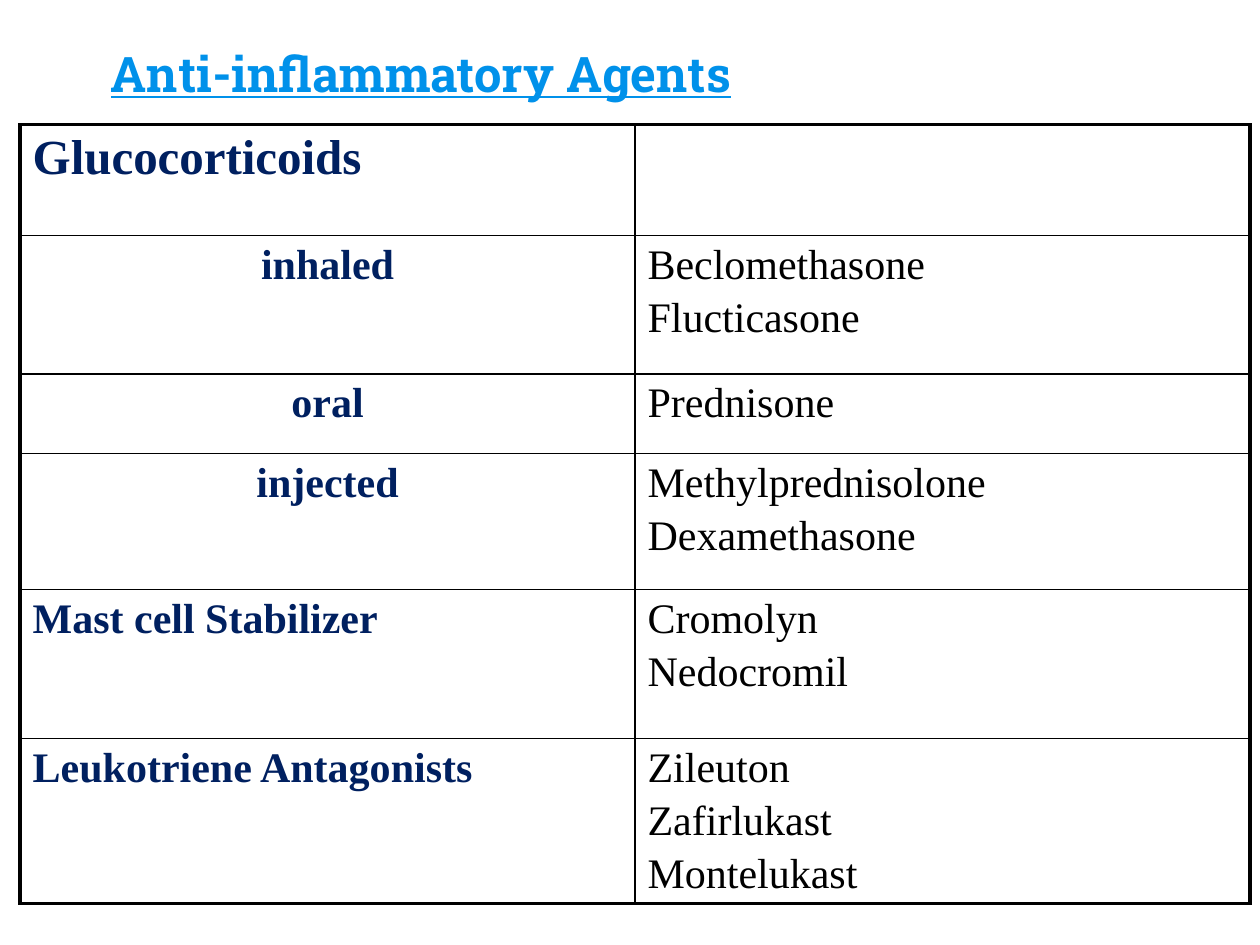
from dataclasses import dataclass

from lxml.etree import SubElement
from pptx import Presentation
from pptx.dml.color import RGBColor
from pptx.enum.text import MSO_ANCHOR as Anchor, MSO_AUTO_SIZE as AutoSize, PP_ALIGN as Align
from pptx.oxml.ns import qn
from pptx.util import Inches, Pt


@dataclass(frozen=True)
class Theme:
    title_color: str = "0091EA"
    group_color: str = "002060"
    drug_color: str = "000000"
    border_color: str = "000000"
    title_font: str = "Roboto Slab"
    table_font: str = "Times New Roman"
    heading_size: float = 28
    body_size: float = 24
    para_gap: float = 3.8
    outer_border: float = 2.25
    inner_border: float = 1


@dataclass(frozen=True)
class DrugGroup:
    name: str
    drugs: tuple[str, ...]
    height: float
    align: Align = Align.LEFT
    size: float = Theme.body_size


THEME = Theme()
TITLE = "Anti-inflammatory Agents"
COLUMN_WIDTH = 4.88
GROUPS = [
    DrugGroup("Glucocorticoids", (), 0.88, size=THEME.heading_size),
    DrugGroup("inhaled", ("Beclomethasone", "Flucticasone"), 1.1, Align.CENTER),
    DrugGroup("oral", ("Prednisone",), 0.63, Align.CENTER),
    DrugGroup("injected", ("Methylprednisolone", "Dexamethasone"), 1.08, Align.CENTER),
    DrugGroup("Mast cell Stabilizer", ("Cromolyn", "Nedocromil"), 1.18),
    DrugGroup("Leukotriene Antagonists", ("Zileuton", "Zafirlukast", "Montelukast"), 1.31),
]


def write_text(frame, lines, *, font=THEME.table_font, size=THEME.body_size,
               color=THEME.drug_color, bold=False, underline=False, align=Align.LEFT) -> None:
    """Write one paragraph per line in a single format."""
    for index, line in enumerate(lines):
        para = frame.add_paragraph() if index else frame.paragraphs[0]
        para.alignment = align
        para.space_before = Pt(THEME.para_gap if index else 0)
        span = para.add_run()
        span.text = line
        span.font.name, span.font.size = font, Pt(size)
        span.font.bold, span.font.underline = bold, underline
        span.font.color.rgb = RGBColor.from_string(color)


def set_borders(cell, outer_sides: set[str]) -> None:
    """Draw all four cell borders, heavier along the table's edge."""
    properties = cell._tc.get_or_add_tcPr()
    for position, side in enumerate("LRTB"):
        width = THEME.outer_border if side in outer_sides else THEME.inner_border
        line = properties.makeelement(qn(f"a:ln{side}"), {"w": str(Pt(width))})
        fill = SubElement(line, qn("a:solidFill"))
        SubElement(fill, qn("a:srgbClr"), val=THEME.border_color)
        properties.insert(position, line)


def add_title(page) -> None:
    box = page.shapes.title
    box.left, box.top = Inches(0.78), Inches(-0.34)
    box.width, box.height = Inches(8.5), Inches(1.25)
    frame = box.text_frame
    frame.auto_size, frame.word_wrap = AutoSize.NONE, True
    frame.vertical_anchor = Anchor.BOTTOM
    frame.margin_left = frame.margin_right = Inches(0.1)
    frame.margin_top = frame.margin_bottom = Inches(0.1)
    write_text(frame, [TITLE], font=THEME.title_font, size=THEME.heading_size,
               color=THEME.title_color, bold=True, underline=True)


def add_drug_table(page, groups: list[DrugGroup]) -> None:
    height = sum(group.height for group in groups)
    table = page.shapes.add_table(len(groups), 2, Inches(0.16), Inches(0.99),
                                  Inches(2 * COLUMN_WIDTH), Inches(height)).table
    table.first_row = table.horz_banding = False
    for column in table.columns:
        column.width = Inches(COLUMN_WIDTH)

    for row, group in enumerate(groups):
        table.rows[row].height = Inches(group.height)
        name_cell, drug_cell = table.cell(row, 0), table.cell(row, 1)
        write_text(name_cell.text_frame, [group.name], size=group.size,
                   color=THEME.group_color, bold=True, align=group.align)
        write_text(drug_cell.text_frame, group.drugs)

        edges = {"T"} if row == 0 else {"B"} if row == len(groups) - 1 else set()
        for cell, side in ((name_cell, "L"), (drug_cell, "R")):
            cell.fill.background()
            set_borders(cell, edges | {side})


def main() -> None:
    deck = Presentation()
    deck.slide_width, deck.slide_height = Inches(10), Inches(7.5)
    page = deck.slides.add_slide(deck.slide_layouts[5])  # title only
    add_title(page)
    add_drug_table(page, GROUPS)
    deck.save("out.pptx")


if __name__ == "__main__":
    main()
